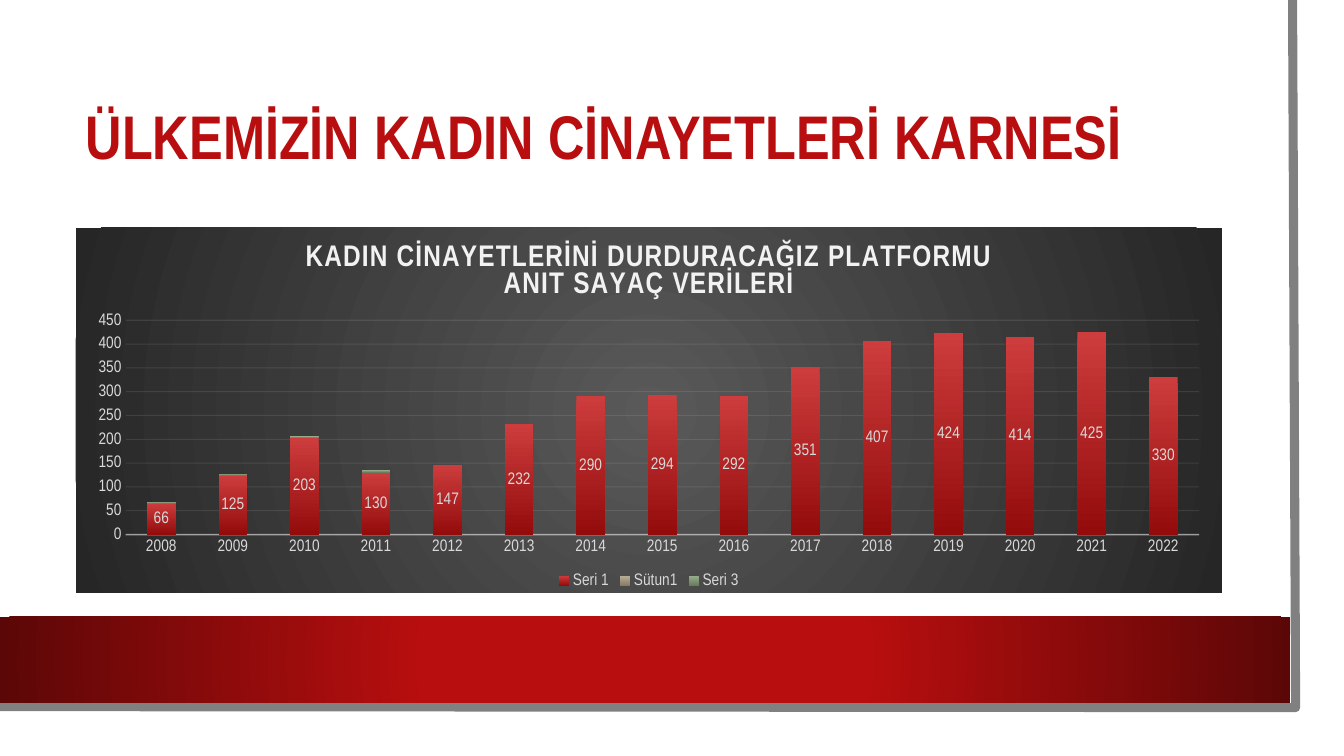
from lxml.etree import SubElement
from pptx import Presentation
from pptx.chart.data import CategoryChartData
from pptx.dml.color import RGBColor
from pptx.enum.chart import XL_CHART_TYPE, XL_LABEL_POSITION, XL_LEGEND_POSITION, XL_TICK_MARK
from pptx.enum.shapes import MSO_SHAPE
from pptx.enum.text import MSO_ANCHOR, MSO_AUTO_SIZE, PP_ALIGN
from pptx.oxml import parse_xml
from pptx.oxml.ns import nsdecls, qn
from pptx.util import Inches, Pt

FONT = "Arial Narrow"
W, H = 13.33, 7.5
LEFT, WIDTH = 0.75, 11.37
COLORS = {
    "paper": "FFFFFF", "red": "B80E0F", "dark_red": "5C0707", "frame": "808080",
    "center": "595959", "edge": "262626", "label": "D9D9D9", "light": "F2F2F2",
}
YEARS = [str(year) for year in range(2008, 2023)]
SERIES = [
    ("Seri 1", [66, 125, 203, 130, 147, 232, 290, 294, 292, 351, 407, 424, 414, 425, 330],
     ("CD3D3D", "940B0C")),
    ("Sütun1", [None] * len(YEARS), ("B9AF9A", "887B61")),
    ("Seri 3", [2, 2, 3, 5] + [None] * (len(YEARS) - 4), ("98AD8D", "667C5B")),
]
CHART_TITLE = ["KADIN CİNAYETLERİNİ DURDURACAĞIZ PLATFORMU", "ANIT SAYAÇ VERİLERİ"]


def rgb(name):
    return RGBColor.from_string(COLORS[name])


def style(font, size, color, bold=False):
    font.name, font.size, font.bold = FONT, Pt(size), bold
    font.color.rgb = rgb(color)


def add_gradient(sp_pr, first, last, start=0, radial=False):
    shade = '<a:lin ang="5400000" scaled="0"/>'
    if radial:
        shade = ('<a:path path="circle"><a:fillToRect l="50000" t="50000" '
                 'r="50000" b="50000"/></a:path>')
    sp_pr.append(parse_xml(
        f'<a:gradFill {nsdecls("a")} rotWithShape="1"><a:gsLst>'
        f'<a:gs pos="{start * 1000}"><a:srgbClr val="{first}"/></a:gs>'
        f'<a:gs pos="100000"><a:srgbClr val="{last}"/></a:gs>'
        f'</a:gsLst>{shade}</a:gradFill>'))


def set_line(line, width, opacity):
    line.width = Pt(width)
    line.color.rgb = rgb("light")
    color = next(line._get_or_add_ln().iter(qn("a:srgbClr")))
    SubElement(color, qn("a:alpha")).set("val", str(opacity * 1000))


def add_frame(s):
    builder = s.shapes.build_freeform(Inches(12.82), 0)
    builder.add_line_segments(
        [(Inches(12.85), Inches(7.02)), (Inches(-0.03), Inches(7.01))], close=False)
    sp = builder.convert_to_shape()
    sp.shadow.inherit = False
    sp.fill.background()
    sp.line.color.rgb = rgb("frame")
    sp.line.width = Pt(6.5)


def add_band(s):
    sp = s.shapes.add_shape(MSO_SHAPE.RECTANGLE, 0, Inches(H * 0.816),
                            Inches(W * 0.96), Inches(0.85))
    add_gradient(sp._element.spPr, COLORS["red"], COLORS["dark_red"], 34, True)
    sp.line.fill.background()
    sp.shadow.inherit = False


def set_title(s, text):
    sp = s.shapes.title
    sp.left, sp.top = Inches(LEFT), Inches(0.75)
    sp.width, sp.height = Inches(WIDTH), Inches(1.26)
    tf = sp.text_frame
    tf.word_wrap, tf.auto_size = True, MSO_AUTO_SIZE.NONE
    tf.vertical_anchor = MSO_ANCHOR.MIDDLE
    p = tf.paragraphs[0]
    p.alignment, p.line_spacing = PP_ALIGN.LEFT, 0.9
    r = p.add_run()
    r.text = text
    style(r.font, 44, "red", True)


def set_chart_title(chart):
    tf = chart.chart_title.text_frame
    for i, text in enumerate(CHART_TITLE):
        p = tf.add_paragraph() if i else tf.paragraphs[0]
        p.alignment = PP_ALIGN.CENTER
        r = p.add_run()
        r.text = text
        style(r.font, 21.3, "light", True)
        r.font._element.set("spc", "100")
    chart.chart_title.include_in_layout = False


def set_axes(chart):
    for axis in (chart.category_axis, chart.value_axis):
        axis.major_tick_mark = axis.minor_tick_mark = XL_TICK_MARK.NONE
        style(axis.tick_labels.font, 11.9, "label")
    set_line(chart.category_axis.format.line, 1, 54)
    values = chart.value_axis
    values.minimum_scale, values.maximum_scale, values.major_unit = 0, 450, 50
    values.format.line.fill.background()
    set_line(values.major_gridlines.format.line, 0.75, 10)


def add_murder_chart(s):
    data = CategoryChartData()
    data.categories = YEARS
    for name, counts, _ in SERIES:
        data.add_series(name, counts)
    chart = s.shapes.add_chart(XL_CHART_TYPE.COLUMN_STACKED, Inches(LEFT), Inches(2.26),
                               Inches(WIDTH), Inches(3.62), data).chart
    style(chart.font, 10, "label")
    area = parse_xml(f'<c:spPr {nsdecls("c", "a")}/>')
    add_gradient(area, COLORS["center"], COLORS["edge"], radial=True)
    SubElement(SubElement(area, qn("a:ln")), qn("a:noFill"))
    chart._chartSpace.find(qn("c:chart")).addnext(area)
    set_chart_title(chart)
    set_axes(chart)
    chart.has_legend = True
    chart.legend.position = XL_LEGEND_POSITION.BOTTOM
    chart.legend.include_in_layout = False
    style(chart.legend.font, 11.9, "label")
    plot = chart.plots[0]
    plot.gap_width, plot.overlap, plot.vary_by_categories = 150, 100, False
    for series, (_, _, shades) in zip(plot.series, SERIES):
        add_gradient(series._element.get_or_add_spPr(), *shades)
    labels = plot.series[0].data_labels
    labels.show_value = True
    labels.position = XL_LABEL_POSITION.CENTER
    style(labels.font, 11.9, "label")


def main():
    prs = Presentation()
    prs.slide_width, prs.slide_height = Inches(W), Inches(H)
    s = prs.slides.add_slide(prs.slide_layouts[5])
    s.background.fill.solid()
    s.background.fill.fore_color.rgb = rgb("paper")
    add_frame(s)
    add_band(s)
    set_title(s, "ÜLKEMİZİN KADIN CİNAYETLERİ KARNESİ")
    add_murder_chart(s)
    prs.save("out.pptx")


if __name__ == "__main__":
    main()
